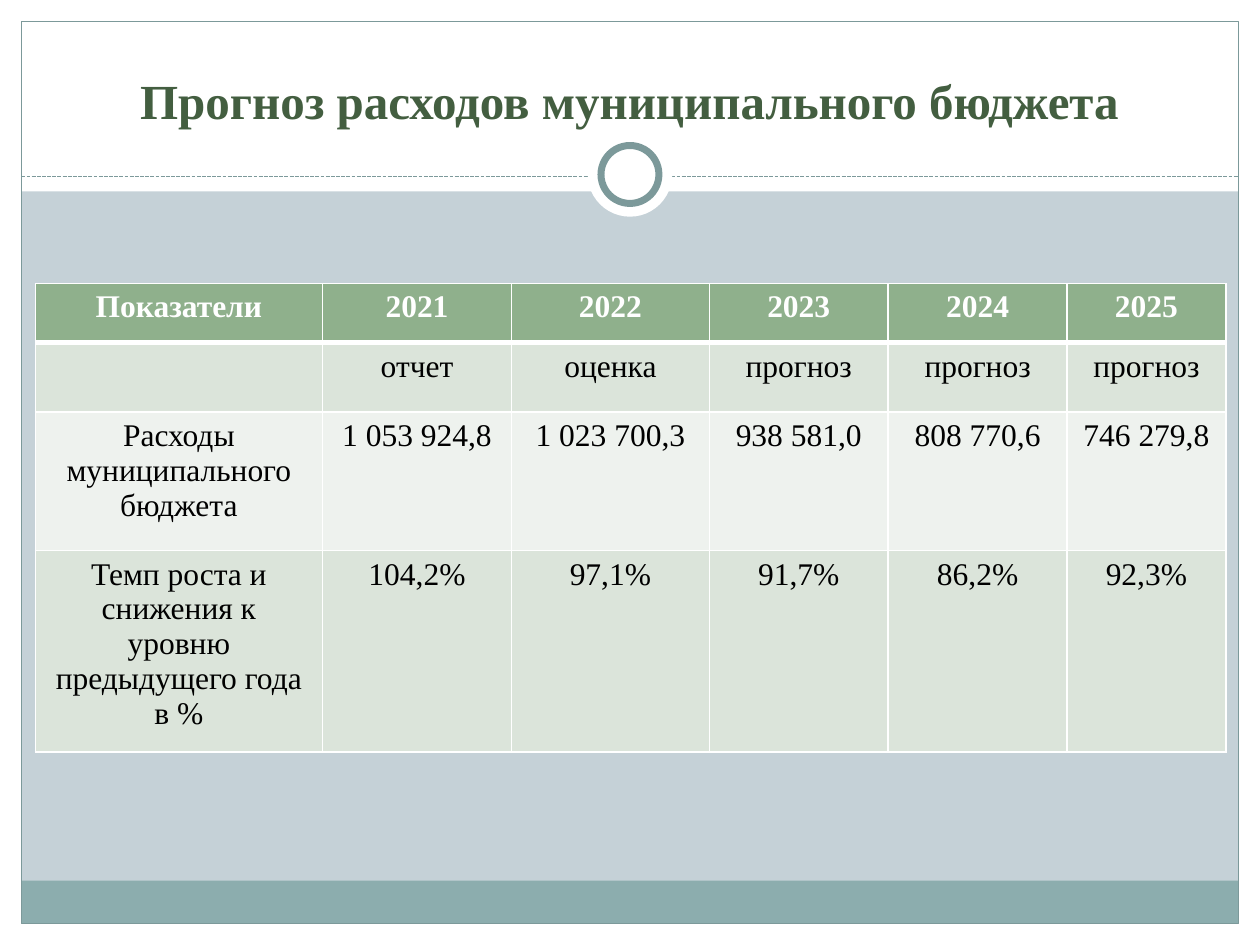
from lxml import etree
from pptx import Presentation
from pptx.dml.color import RGBColor
from pptx.enum import dml, shapes, text
from pptx.oxml import ns
from pptx.util import Inches, Pt

FONT = "Times New Roman"
WHITE, TEAL = "FFFFFF", "7C999A"
HEADER, BAND, LIGHT = "8FB08C", "DBE4DA", "EEF2EE"
COLUMNS = [2.28, 1.5, 1.57, 1.42, 1.42, 1.26]
ROWS = [
    (0.47, HEADER, ["Показатели", "2021", "2022", "2023", "2024", "2025"]),
    (0.55, BAND, ["", "отчет", "оценка", "прогноз", "прогноз", "прогноз"]),
    (1.1, LIGHT, ["Расходы муниципального бюджета", "1 053 924,8",
                  "1 023 700,3", "938 581,0", "808 770,6", "746 279,8"]),
    (1.49, BAND, ["Темп роста и снижения к уровню предыдущего года в %",
                  "104,2%", "97,1%", "91,7%", "86,2%", "92,3%"]),
]


def rgb(value):
    return RGBColor.from_string(value)


def write(frame, content, size=18, color="000000", bold=False):
    paragraph = frame.paragraphs[0]
    paragraph.alignment = text.PP_ALIGN.CENTER
    paragraph.font.size = Pt(size)
    if content:
        run = paragraph.add_run()
        run.text = content
        run.font.name = FONT
        run.font.size = Pt(size)
        run.font.bold = bold
        run.font.color.rgb = rgb(color)


def add_figure(slide, box, fill=None, line=None, width=0.75,
               preset=shapes.MSO_SHAPE.RECTANGLE):
    figure = slide.shapes.add_shape(preset, *map(Inches, box))
    figure.shadow.inherit = False
    if fill:
        figure.fill.solid()
        figure.fill.fore_color.rgb = rgb(fill)
    else:
        figure.fill.background()
    if line:
        figure.line.color.rgb = rgb(line)
        figure.line.width = Pt(width)
    else:
        figure.line.fill.background()


def add_backdrop(slide, box):
    left, top, width, height = box
    margin, header, footer = 0.17, 1.52, 0.34
    right, bottom = left + width - margin, top + height - margin
    slide.background.fill.solid()
    slide.background.fill.fore_color.rgb = rgb("C5D1D7")
    for band in [(left, bottom, width, margin), (left, top, width, header),
                 (left, top, margin, height), (right, top, margin, height)]:
        add_figure(slide, band, WHITE)
    inner = width - 2 * margin
    add_figure(slide, (left + margin, bottom - footer, inner, footer), "8CADAE")
    add_figure(slide, (left + margin, top + margin, inner, height - 2 * margin), line=TEAL)


def add_divider(slide, box):
    left, top, width, height = box
    axis = top + 0.35
    rule = slide.shapes.add_connector(
        shapes.MSO_CONNECTOR.STRAIGHT,
        *map(Inches, (left, axis, left + width, axis)))
    rule.line.color.rgb = rgb(TEAL)
    rule.line.width = Pt(0.75)
    rule.line.dash_style = dml.MSO_LINE.SQUARE_DOT
    etree.SubElement(rule._element.spPr, ns.qn("a:effectLst"))
    center = left + width / 2
    oval = shapes.MSO_SHAPE.OVAL
    add_figure(slide, (center - height / 2, top, height, height), WHITE, preset=oval)
    ring = 0.46
    add_figure(slide, (center - ring / 2, top + (height - ring) / 2, ring, ring),
               WHITE, TEAL, 4, oval)


def add_title(slide, box):
    frame = slide.shapes.add_textbox(*map(Inches, box)).text_frame
    frame.word_wrap = True
    frame.vertical_anchor = text.MSO_ANCHOR.BOTTOM
    write(frame, "Прогноз расходов муниципального бюджета",
          size=28, color="435E40", bold=True)


def set_borders(cell, widths):
    properties = cell._tc.get_or_add_tcPr()
    for position, (side, width) in enumerate(widths.items()):
        border = etree.Element(ns.qn(f"a:ln{side}"), w=str(Pt(width)))
        fill = etree.SubElement(border, ns.qn("a:solidFill"))
        etree.SubElement(fill, ns.qn("a:srgbClr"), val=WHITE)
        properties.insert(position, border)


def add_forecast(slide, box):
    table = slide.shapes.add_table(len(ROWS), len(COLUMNS), *map(Inches, box)).table
    for column, width in zip(table.columns, COLUMNS):
        column.width = Inches(width)
    for index, (height, fill, values) in enumerate(ROWS):
        table.rows[index].height = Inches(height)
        heading = index == 0
        widths = {"L": 1, "R": 1, "T": 3 if index == 1 else 1, "B": 3 if heading else 1}
        for cell, value in zip(table.rows[index].cells, values):
            cell.fill.solid()
            cell.fill.fore_color.rgb = rgb(fill)
            set_borders(cell, widths)
            write(cell.text_frame, value, color=WHITE if heading else "000000", bold=heading)


def main():
    deck = Presentation()
    deck.slide_width, deck.slide_height = Inches(10), Inches(7.5)
    slide = deck.slides.add_slide(deck.slide_layouts[6])
    add_backdrop(slide, (0, 0, 10, 7.5))
    add_divider(slide, (0.17, 1.05, 9.66, 0.67))
    add_title(slide, (0.33, 0.25, 9.33, 0.83))
    add_forecast(slide, (0.28, 2.25, sum(COLUMNS), sum(row[0] for row in ROWS)))
    deck.save("out.pptx")


if __name__ == "__main__":
    main()
